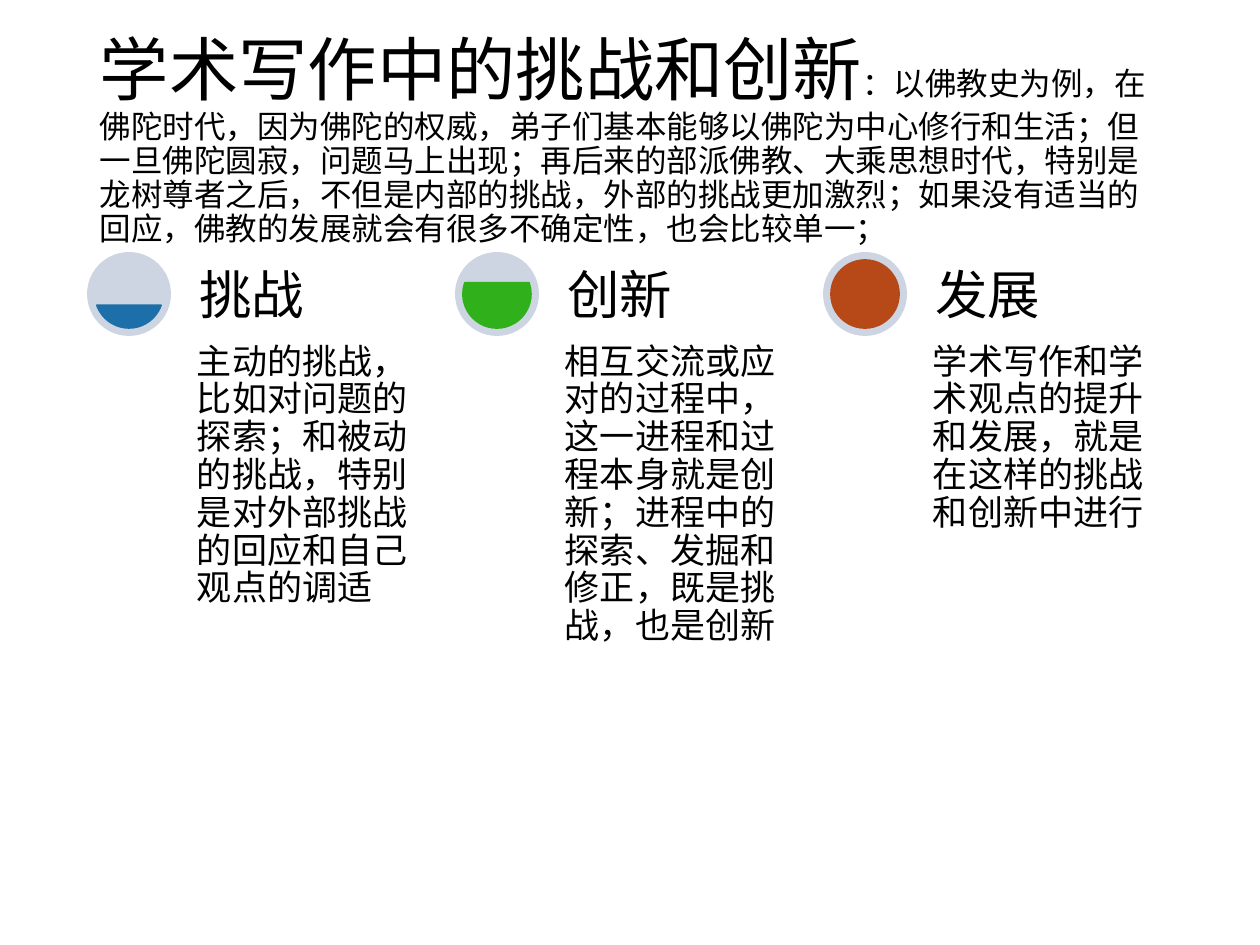
from dataclasses import dataclass

from pptx import Presentation
from pptx.dml.color import RGBColor
from pptx.enum.shapes import MSO_SHAPE
from pptx.enum.text import MSO_ANCHOR
from pptx.slide import Slide
from pptx.util import Emu, Pt

PX_PER_INCH = 126


def px(length):
    return Emu(round(length * 914400 / PX_PER_INCH))


def color(hex_string):
    return RGBColor.from_string(hex_string)


@dataclass
class SlideBuilder:
    slide: Slide
    font: str = "Times New Roman"
    text_color: str = "000000"
    line_spacing: float = 0.9

    def text(self, box, runs, anchor=MSO_ANCHOR.TOP, inset=(8, 8)):
        """Add one paragraph made of (wording, point size) runs."""
        shape = self.slide.shapes.add_textbox(*map(px, box))
        frame = shape.text_frame
        frame.word_wrap = True
        frame.vertical_anchor = anchor
        frame.margin_left = frame.margin_right = px(inset[0])
        frame.margin_top = frame.margin_bottom = px(inset[1])
        paragraph = frame.paragraphs[0]
        paragraph.line_spacing = self.line_spacing
        for wording, size in runs:
            run = paragraph.add_run()
            run.text = wording
            run.font.size = Pt(size)
            run.font.name = self.font
            run.font.color.rgb = color(self.text_color)

    def shape(self, kind, box, fill, outlined=False):
        shape = self.slide.shapes.add_shape(kind, *map(px, box))
        shape.shadow.inherit = False
        shape.fill.solid()
        shape.fill.fore_color.rgb = color(fill)
        if outlined:
            shape.line.color.rgb = color(fill)
            shape.line.width = Pt(1)
        else:
            shape.line.fill.background()
        return shape

    def gauge(self, left, top, size, fill, angles):
        """Add a disc filled up to the chord between two angles in degrees."""
        self.shape(MSO_SHAPE.OVAL, (left, top, size, size), "CDD5E2")
        margin = size // 10
        level_size = size - 2 * margin
        level_box = (left + margin, top + margin, level_size, level_size)
        level = self.shape(MSO_SHAPE.CHORD, level_box, fill, outlined=True)
        for index, angle in enumerate(angles):
            # Angles are stored in 1/60000 degree, adjustments in 1/100000
            level.adjustments[index] = angle * 0.6


TITLE = "学术写作中的挑战和创新"
SUBTITLE = (
    "：以佛教史为例，在佛陀时代，因为佛陀的权威，弟子们基本能够以佛陀为中心修行和生活；"
    "但一旦佛陀圆寂，问题马上出现；再后来的部派佛教、大乘思想时代，特别是龙树尊者之后，"
    "不但是内部的挑战，外部的挑战更加激烈；如果没有适当的回应，"
    "佛教的发展就会有很多不确定性，也会比较单一；"
)
# Heading, body, gauge colour, gauge angles
COLUMNS = [
    ("挑战", "主动的挑战，比如对问题的探索；和被动的挑战，特别是对外部挑战的回应和自己观点的调适",
     "1D6FA9", (19.47, 160.53)),
    ("创新", "相互交流或应对的过程中，这一进程和过程本身就是创新；"
     "进程中的探索、发掘和修正，既是挑战，也是创新",
     "30B01B", (340.53, 199.47)),
    ("发展", "学术写作和学术观点的提升和发展，就是在这样的挑战和创新中进行",
     "B74919", (270, 270)),
]
LEFT, TOP, PITCH = 87, 252, 368
GAUGE_SIZE, TEXT_OFFSET, TEXT_WIDTH, BODY_HEIGHT = 84, 102, 248, 354


def main():
    presentation = Presentation()
    presentation.slide_width, presentation.slide_height = px(1260), px(945)
    slide = presentation.slides.add_slide(presentation.slide_layouts[6])
    builder = SlideBuilder(slide)

    # Title with its running explanation
    builder.text((LEFT, 50, 1086, 183), [(TITLE, 39.6), (SUBTITLE, 18)],
                 MSO_ANCHOR.MIDDLE, (13, 6))

    # Three columns, each with a gauge, a body and a heading
    for index, (heading, body, fill, angles) in enumerate(COLUMNS):
        left = LEFT + index * PITCH
        text_left = left + TEXT_OFFSET
        builder.gauge(left, TOP, GAUGE_SIZE, fill, angles)
        builder.text((text_left, TOP + GAUGE_SIZE, TEXT_WIDTH, BODY_HEIGHT),
                     [(body, 20)])
        builder.text((text_left, TOP, TEXT_WIDTH, GAUGE_SIZE),
                     [(heading, 30)], MSO_ANCHOR.BOTTOM, (10, 10))

    presentation.save("out.pptx")


if __name__ == "__main__":
    main()
